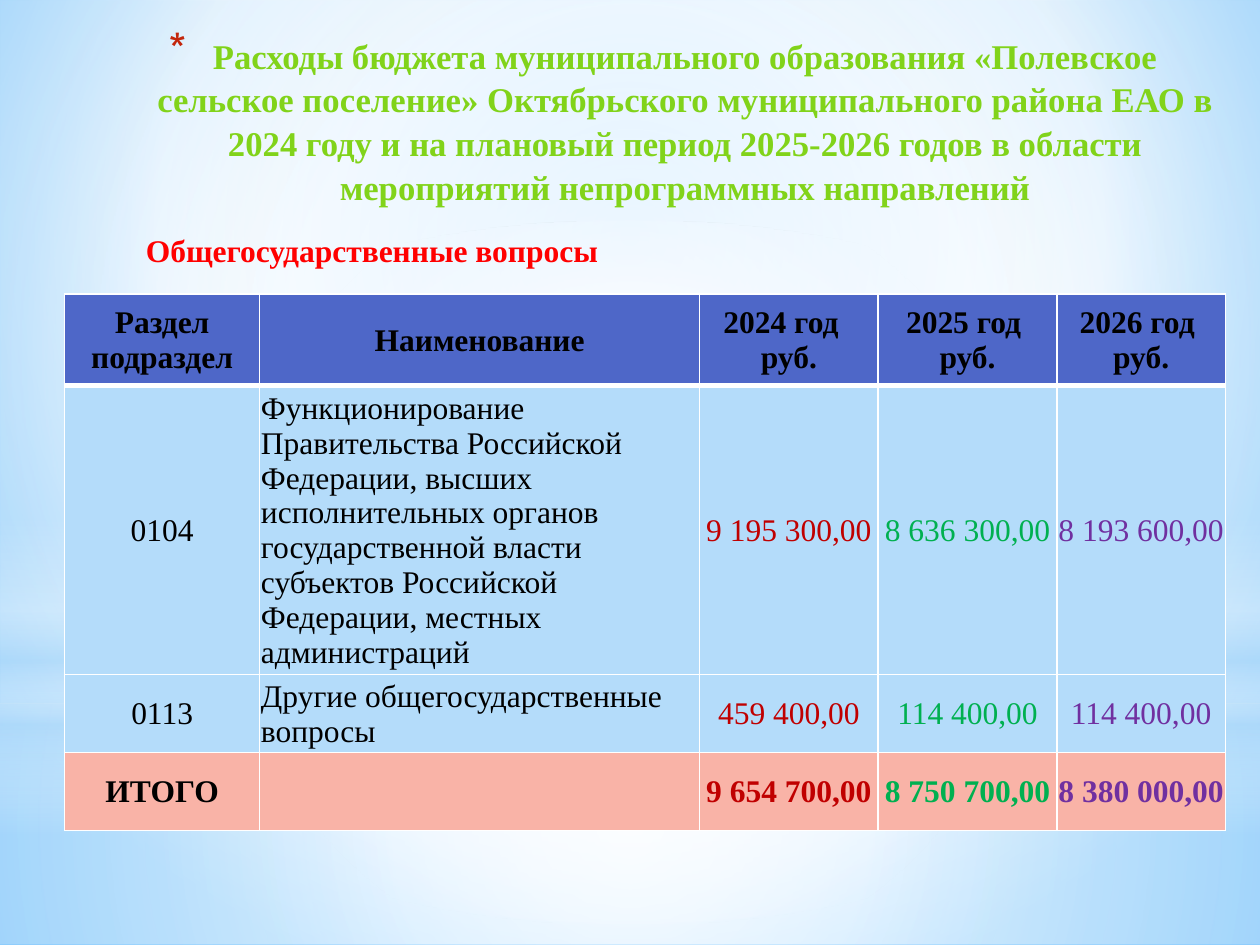
from dataclasses import dataclass

from lxml import etree
from pptx import Presentation
from pptx.dml.color import RGBColor
from pptx.enum.shapes import MSO_SHAPE
from pptx.enum.text import MSO_ANCHOR, MSO_AUTO_SIZE, PP_ALIGN
from pptx.oxml.ns import qn
from pptx.util import Pt

RECTANGLE, OVAL = MSO_SHAPE.RECTANGLE, MSO_SHAPE.OVAL
LEFT, CENTER = PP_ALIGN.LEFT, PP_ALIGN.CENTER
TOP, MIDDLE = MSO_ANCHOR.TOP, MSO_ANCHOR.MIDDLE
TITLE_ONLY = 5


@dataclass(frozen=True)
class Theme:
    font: str = "Times New Roman"
    title_size: float = 19.8
    text_size: float = 18
    title: str = "81D31A"
    bullet: str = "C3260C"
    subtitle: str = "FF0000"
    text: str = "000000"
    years: tuple = ("C00000", "00B050", "7030A0")
    header_fill: str = "4E67C8"
    body_fill: str = "B4DCFA"
    total_fill: str = "F9B3A7"
    white: str = "FFFFFF"
    sky: str = "9ED5FF"
    deep_sky: str = "5BB9FF"


THEME = Theme()
PALE, WHITE = THEME.body_fill, THEME.white
CENTERED = (50, 50, 50, 50)

TITLE = ("Расходы бюджета муниципального образования «Полевское сельское поселение» "
         "Октябрьского муниципального района ЕАО в 2024 году и на плановый период "
         "2025-2026 годов в области мероприятий непрограммных направлений")
SUBTITLE = "Общегосударственные вопросы"
ROWS = [
    ("Раздел подраздел", "Наименование", "2024 год  \nруб.", "2025 год  руб.", "2026 год  руб."),
    ("0104", "Функционирование Правительства Российской Федерации, высших исполнительных "
     "органов государственной власти субъектов Российской Федерации, местных администраций",
     "9 195 300,00", "8 636 300,00", "8 193 600,00"),
    ("0113", "Другие общегосударственные вопросы", "459 400,00", "114 400,00", "114 400,00"),
    ("ИТОГО", "", "9 654 700,00", "8 750 700,00", "8 380 000,00"),
]
COLUMN_WIDTHS = (111.5, 251.4, 102.1, 102.1, 96.3)
ROW_HEIGHTS = (52.5, 165, 44.6, 44.6)

# Left, top, width, height, preset, stops (position, colour, opacity), centre or None
GLOWS = [
    (0, 402, 720, 138, RECTANGLE,
     [(0, WHITE, 91), (37, WHITE, 76), (100, PALE, 79)], CENTERED),
    (0, 0, 720, 402, RECTANGLE,
     [(0, WHITE, 89), (48, WHITE, 62), (100, PALE, 79)], CENTERED),
    (0, 296.6, 720, 180, RECTANGLE,
     [(0, WHITE, 0), (29, WHITE, 30), (45, PALE, 40), (55, WHITE, 26),
      (65, PALE, 60), (100, WHITE, 0)], None),
    (0, 126, 720, 402, OVAL, [(0, WHITE, 100), (56, WHITE, 0)], CENTERED),
]


def add_element(parent, tag, **attributes):
    values = {name: str(value) for name, value in attributes.items()}
    return etree.SubElement(parent, qn(tag), values)


def set_gradient(fill, owner, stops, centre):
    """Fill with a circular gradient around centre, or top to bottom without one."""
    fill.gradient()
    gradient = next(owner.iter(qn("a:gradFill")))
    for child in list(gradient):
        gradient.remove(child)
    stop_list = add_element(gradient, "a:gsLst")
    for position, color, opacity in stops:
        stop = add_element(stop_list, "a:gs", pos=position * 1000)
        color_element = add_element(stop, "a:srgbClr", val=color)
        if opacity < 100:
            add_element(color_element, "a:alpha", val=opacity * 1000)
    if centre is None:
        add_element(gradient, "a:lin", ang=5400000, scaled=0)
    else:
        circle = add_element(gradient, "a:path", path="circle")
        add_element(circle, "a:fillToRect",
                    **{side: value * 1000 for side, value in zip("ltrb", centre)})


def add_glow(slide, left, top, width, height, preset, stops, centre):
    shape = slide.shapes.add_shape(preset, Pt(left), Pt(top), Pt(width), Pt(height))
    shape.shadow.inherit = False
    shape.line.fill.background()
    set_gradient(shape.fill, shape.element, stops, centre)


def format_text(text_frame, size, color, bold, alignment):
    for paragraph in text_frame.paragraphs:
        paragraph.alignment = alignment
        for run in paragraph.runs:
            run.font.name = THEME.font
            run.font.size = Pt(size)
            run.font.bold = bold
            run.font.color.rgb = RGBColor.from_string(color)


def set_title(slide):
    title = slide.shapes.title
    title.left, title.top, title.width, title.height = Pt(54), Pt(15), Pt(649.4), Pt(102.2)
    frame = title.text_frame
    frame.text = TITLE
    frame.word_wrap = True
    frame.auto_size = MSO_AUTO_SIZE.NONE
    frame.vertical_anchor = TOP
    format_text(frame, THEME.title_size, THEME.title, True, CENTER)
    paragraph = frame.paragraphs[0]
    paragraph.line_spacing = 1.05
    properties = paragraph._p.get_or_add_pPr()
    properties.set("marL", str(Pt(25.2)))
    properties.set("indent", str(-Pt(25.2)))
    add_element(add_element(properties, "a:buClr"), "a:srgbClr", val=THEME.bullet)
    add_element(properties, "a:buSzPct", val=128000)
    add_element(properties, "a:buChar", char="*")
    title.element.getparent().append(title.element)  # in front of the glows


def add_subtitle(slide):
    box = slide.shapes.add_textbox(Pt(76.3), Pt(128.2), Pt(275.8), Pt(28.8))
    box.text_frame.word_wrap = False
    box.text_frame.text = SUBTITLE
    format_text(box.text_frame, THEME.text_size, THEME.subtitle, True, LEFT)


def set_borders(cell, top, bottom):
    properties = cell._tc.get_or_add_tcPr()
    sides = (("a:lnL", 1), ("a:lnR", 1), ("a:lnT", top), ("a:lnB", bottom))
    for index, (tag, width) in enumerate(sides):
        line = add_element(properties, tag, w=Pt(width))
        add_element(add_element(line, "a:solidFill"), "a:srgbClr", val=THEME.white)
        properties.insert(index, line)


def fill_cell(cell, text, row, column):
    header, total = row == 0, row == len(ROWS) - 1
    fill = THEME.header_fill if header else THEME.total_fill if total else THEME.body_fill
    color = THEME.text if header or column < 2 else THEME.years[column - 2]
    alignment = LEFT if column == 1 and not header else CENTER
    cell.text_frame.text = text
    cell.vertical_anchor = MIDDLE
    cell.margin_left = cell.margin_right = cell.margin_top = Pt(0.75)
    cell.margin_bottom = 0
    format_text(cell.text_frame, THEME.text_size, color, header or total, alignment)
    cell.fill.solid()
    cell.fill.fore_color.rgb = RGBColor.from_string(fill)
    set_borders(cell, top=3 if row == 1 else 1, bottom=3 if header else 1)


def add_budget_table(slide):
    table = slide.shapes.add_table(
        len(ROWS), len(COLUMN_WIDTHS), Pt(36.9), Pt(167.9),
        Pt(sum(COLUMN_WIDTHS)), Pt(sum(ROW_HEIGHTS))).table
    for column, width in zip(table.columns, COLUMN_WIDTHS):
        column.width = Pt(width)
    for row, height in zip(table.rows, ROW_HEIGHTS):
        row.height = Pt(height)
    for row, texts in enumerate(ROWS):
        for column, text in enumerate(texts):
            fill_cell(table.cell(row, column), text, row, column)


def main():
    presentation = Presentation()
    presentation.slide_width, presentation.slide_height = Pt(720), Pt(540)
    slide = presentation.slides.add_slide(presentation.slide_layouts[TITLE_ONLY])
    set_gradient(slide.background.fill, slide.element,
                 [(0, THEME.sky, 100), (60, WHITE, 100), (100, THEME.deep_sky, 100)],
                 (20, 10, 20, 60))
    for glow in GLOWS:
        add_glow(slide, *glow)
    add_subtitle(slide)
    set_title(slide)
    add_budget_table(slide)
    presentation.save("out.pptx")


if __name__ == "__main__":
    main()
